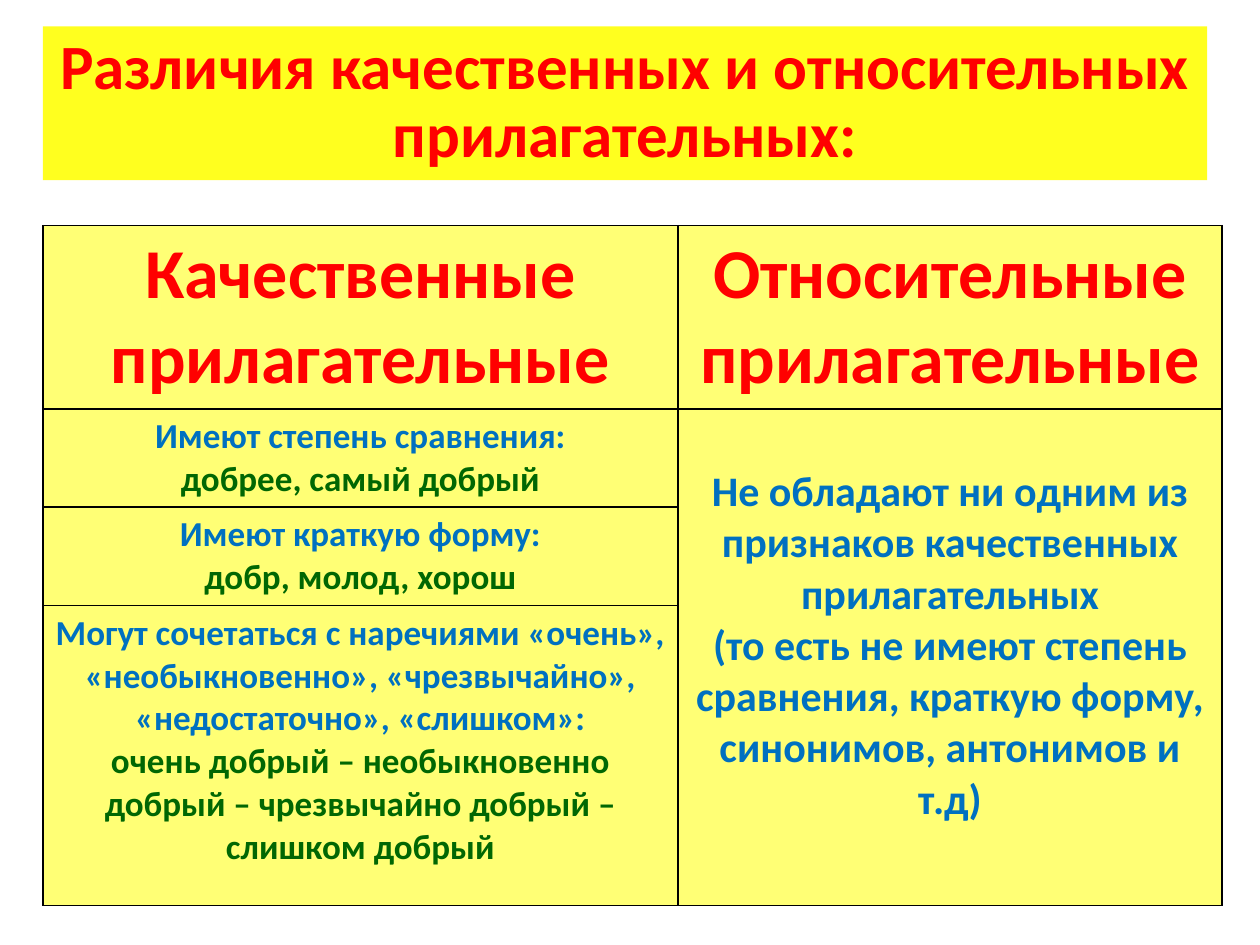
from lxml import etree
from pptx import Presentation
from pptx.dml.color import RGBColor
from pptx.enum.shapes import MSO_SHAPE as Shape
from pptx.enum.text import MSO_ANCHOR as Anchor, PP_ALIGN as Align
from pptx.oxml import parse_xml
from pptx.oxml.ns import nsdecls, qn
from pptx.util import Inches, Pt

RED, BLUE, GREEN, YELLOW = "FF0000", "0070C0", "016703", "FFFF00"


def paint(fill, color, opacity):
    """Solid fill with an opacity in percent."""
    fill.solid()
    fill.fore_color.rgb = RGBColor.from_string(color)
    for node in fill._xPr.find(qn("a:solidFill")):
        etree.SubElement(node, qn("a:alpha"), val=str(opacity * 1000))


def write(frame, lines, size):
    """One centred bold paragraph for each (text, colour) pair."""
    for index, (text, color) in enumerate(lines):
        para = frame.add_paragraph() if index else frame.paragraphs[0]
        para.alignment = Align.CENTER
        span = para.add_run()
        span.text = text
        span.font.name = "Calibri"
        span.font.size = Pt(size)
        span.font.bold = True
        span.font.color.rgb = RGBColor.from_string(color)


deck = Presentation()
deck.slide_width, deck.slide_height = Inches(10), Inches(7.5)
page = deck.slides.add_slide(deck.slide_layouts[6])

# Title banner
banner = page.shapes.add_shape(
    Shape.RECTANGLE, Inches(0.34), Inches(0.21), Inches(9.24), Inches(1.22))
banner.shadow.inherit = False
banner.line.fill.background()
paint(banner.fill, YELLOW, 88)
title = banner.text_frame
title.word_wrap = True
title.vertical_anchor = Anchor.MIDDLE
write(title, [("Различия качественных и относительных прилагательных:", RED)], 36)
title.paragraphs[0].line_spacing = 0.9

# Table grid
widths = [5.04, 4.32]
heights = [1.43, 0.77, 0.77, 2.38]
table = page.shapes.add_table(
    len(heights), len(widths), Inches(0.34), Inches(1.79),
    Inches(sum(widths)), Inches(sum(heights))).table
for column, width in zip(table.columns, widths):
    column.width = Inches(width)
for row, height in zip(table.rows, heights):
    row.height = Inches(height)

# Cell fills and black borders
for cell in table.iter_cells():
    paint(cell.fill, YELLOW, 54)
    for place, side in enumerate(("lnL", "lnR", "lnT", "lnB")):
        border = parse_xml(
            f'<a:{side} {nsdecls("a")} w="12700"><a:solidFill>'
            f'<a:srgbClr val="000000"/></a:solidFill></a:{side}>')
        cell._tc.tcPr.insert(place, border)

# The right-hand answer spans all three feature rows
answer = table.cell(1, 1)
answer.merge(table.cell(3, 1))
answer.margin_top = Inches(0.46)

# Wording: row, column, size, lines
contents = [
    (0, 0, 40, [("Качественные прилагательные", RED)]),
    (0, 1, 40, [("Относительные прилагательные", RED)]),
    (1, 0, 20, [("Имеют степень сравнения:", BLUE),
                ("добрее, самый добрый", GREEN)]),
    (2, 0, 20, [("Имеют краткую форму:", BLUE),
                ("добр, молод, хорош", GREEN)]),
    (3, 0, 20, [("Могут сочетаться с наречиями «очень», «необыкновенно», "
                 "«чрезвычайно», «недостаточно», «слишком»:", BLUE),
                ("очень добрый – необыкновенно добрый – "
                 "чрезвычайно добрый – слишком добрый", GREEN)]),
    (1, 1, 24, [("Не обладают ни одним из признаков качественных "
                 "прилагательных", BLUE),
                ("(то есть не имеют степень сравнения, краткую форму, "
                 "синонимов, антонимов и т.д)", BLUE)]),
]
for row, column, size, lines in contents:
    write(table.cell(row, column).text_frame, lines, size)

deck.save("out.pptx")
